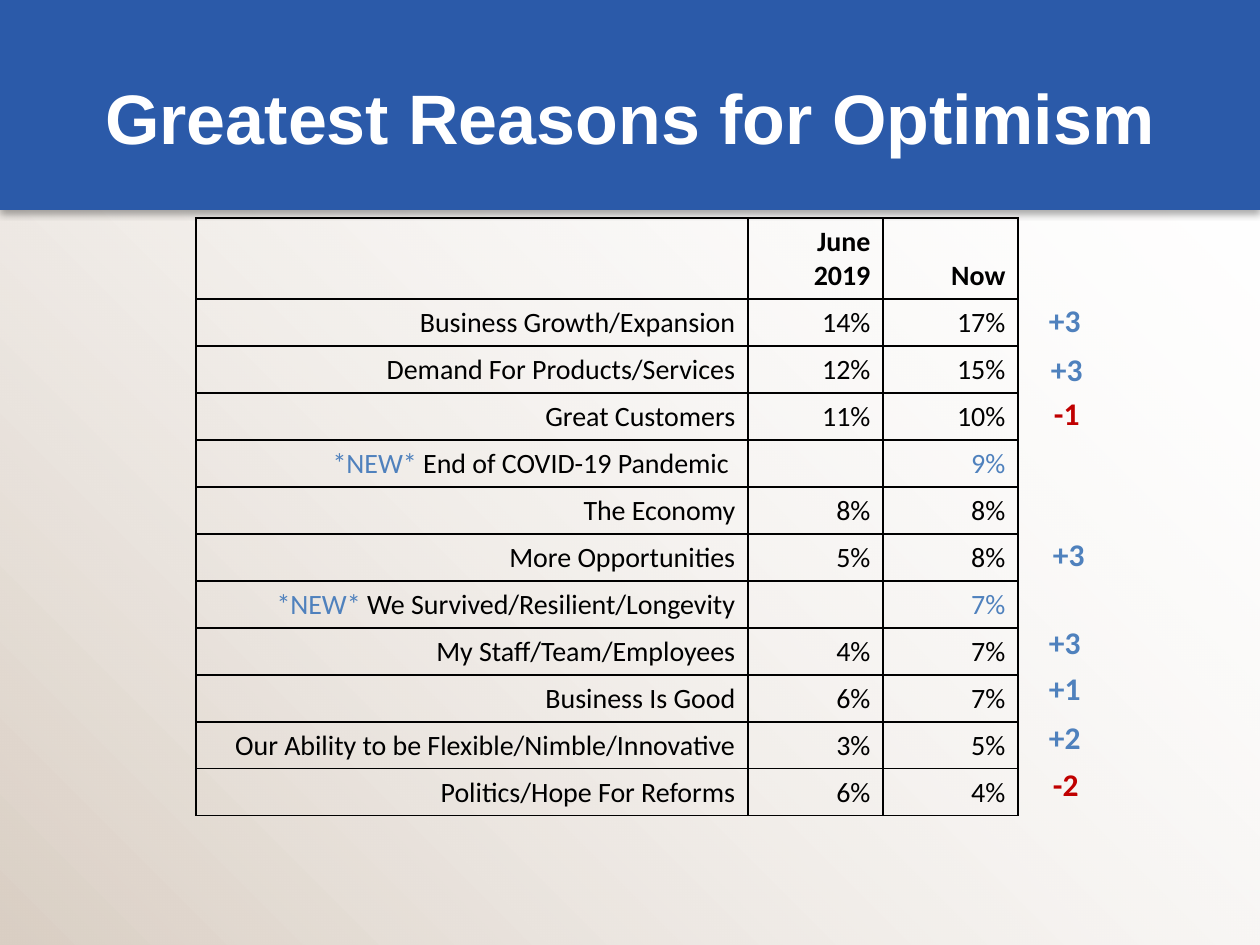
from lxml.etree import SubElement
from pptx import Presentation
from pptx.dml.color import RGBColor
from pptx.enum.shapes import MSO_SHAPE
from pptx.enum.text import MSO_ANCHOR, PP_ALIGN
from pptx.oxml import parse_xml
from pptx.oxml.ns import nsdecls, qn
from pptx.util import Pt

PX = 914400 // 126
C = {"banner": "2B5AA9", "sand": "DACFC4", "white": "FFFFFF",
     "black": "000000", "blue": "4F81BD", "red": "C00000"}


def style(font, name, size, color, bold=False):
    font.name, font.size, font.bold = name, Pt(size), bold
    font.color.rgb = RGBColor.from_string(C[color])


def add_text(box, text, name, size, color, align, anchor):
    """Add a bold one-line text box; box is left, top, width, height in px."""
    tf = s.shapes.add_textbox(*(v * PX for v in box)).text_frame
    tf.word_wrap = True
    tf.vertical_anchor = anchor
    tf.margin_left = tf.margin_right = tf.margin_top = tf.margin_bottom = 6 * PX
    p = tf.paragraphs[0]
    p.text, p.alignment = text, align
    style(p.font, name, size, color, True)


prs = Presentation()
prs.slide_width, prs.slide_height = 1260 * PX, 945 * PX
s = prs.slides.add_slide(prs.slide_layouts[6])

# Backdrop fading from the lower left, and title banner
backdrop, banner = (
    s.shapes.add_shape(MSO_SHAPE.RECTANGLE, 0, 0, 1260 * PX, h * PX) for h in (945, 210))
for sp in (backdrop, banner):
    sp.shadow.inherit = False
    sp.line.fill.background()
fill = backdrop.fill
fill.gradient()
fill.gradient_angle = 45
for stop, position, color in zip(fill.gradient_stops, (0, 1), ("sand", "white")):
    stop.position = position
    stop.color.rgb = RGBColor.from_string(C[color])
last_color = list(backdrop._element.spPr.iter(qn("a:srgbClr")))[-1]
SubElement(last_color, qn("a:alpha"), val="0")

banner.fill.solid()
banner.fill.fore_color.rgb = RGBColor.from_string(C["banner"])
banner._element.spPr.find(qn("a:effectLst")).append(parse_xml(
    f'<a:outerShdw {nsdecls("a")} blurRad="{Pt(4)}" dist="{Pt(2.2)}" dir="5400000" '
    f'rotWithShape="0"><a:srgbClr val="{C["black"]}"><a:alpha val="32000"/></a:srgbClr>'
    '</a:outerShdw>'))
add_text((63, 38, 1134, 158), "Greatest Reasons for Optimism", "Arial", 40, "white",
         PP_ALIGN.CENTER, MSO_ANCHOR.MIDDLE)

# Table of reasons
NEW = "*NEW* "
rows = [
    ("", "June 2019", "Now"),
    ("Business Growth/Expansion", "14%", "17%"),
    ("Demand For Products/Services", "12%", "15%"),
    ("Great Customers", "11%", "10%"),
    (NEW + "End of COVID-19 Pandemic ", "", "9%"),
    ("The Economy", "8%", "8%"),
    ("More Opportunities", "5%", "8%"),
    (NEW + "We Survived/Resilient/Longevity", "", "7%"),
    ("My Staff/Team/Employees", "4%", "7%"),
    ("Business Is Good", "6%", "7%"),
    ("Our Ability to be Flexible/Nimble/Innovative", "3%", "5%"),
    ("Politics/Hope For Reforms", "6%", "4%"),
]
table = s.shapes.add_table(len(rows), 3, 196 * PX, 218 * PX, 822 * PX, 598 * PX).table
table.first_row = table.horz_banding = False
for column, width in zip(table.columns, (552, 135, 135)):
    column.width = width * PX
for i, values in enumerate(rows):
    table.rows[i].height = (47 if i else 81) * PX
    is_new = values[0].startswith(NEW)
    for j, value in enumerate(values):
        cell = table.cell(i, j)
        cell.vertical_anchor = MSO_ANCHOR.BOTTOM
        cell.margin_top = cell.margin_bottom = 6 * PX if value else 0
        p = cell.text_frame.paragraphs[0]
        p.alignment = PP_ALIGN.RIGHT
        style(p.font, "Calibri", 16, "blue" if is_new and j == 2 else "black", i == 0)
        if is_new and j == 0:
            r = p.add_run()
            r.text = NEW
            r.font.color.rgb = RGBColor.from_string(C["blue"])
            value = value.removeprefix(NEW)
        if value:
            p.add_run().text = value
        tcPr = cell._tc.get_or_add_tcPr()
        for side in ("lnL", "lnR", "lnT", "lnB"):
            ln = SubElement(tcPr, qn(f"a:{side}"), w=str(Pt(1)))
            SubElement(SubElement(ln, qn("a:solidFill")), qn("a:srgbClr"), val=C["black"])
        cell.fill.background()

# Change since June 2019, beside the rows
changes = [(1043, 295, "+3"), (1045, 344, "+3"), (1048, 388, "-1"), (1047, 529, "+3"),
           (1043, 617, "+3"), (1043, 663, "+1"), (1043, 712, "+2"), (1047, 759, "-2")]
for left, top, change in changes:
    add_text((left, top, 52, 50), change, "Calibri", 18,
             "red" if change.startswith("-") else "blue", PP_ALIGN.LEFT, MSO_ANCHOR.TOP)

prs.save("out.pptx")
